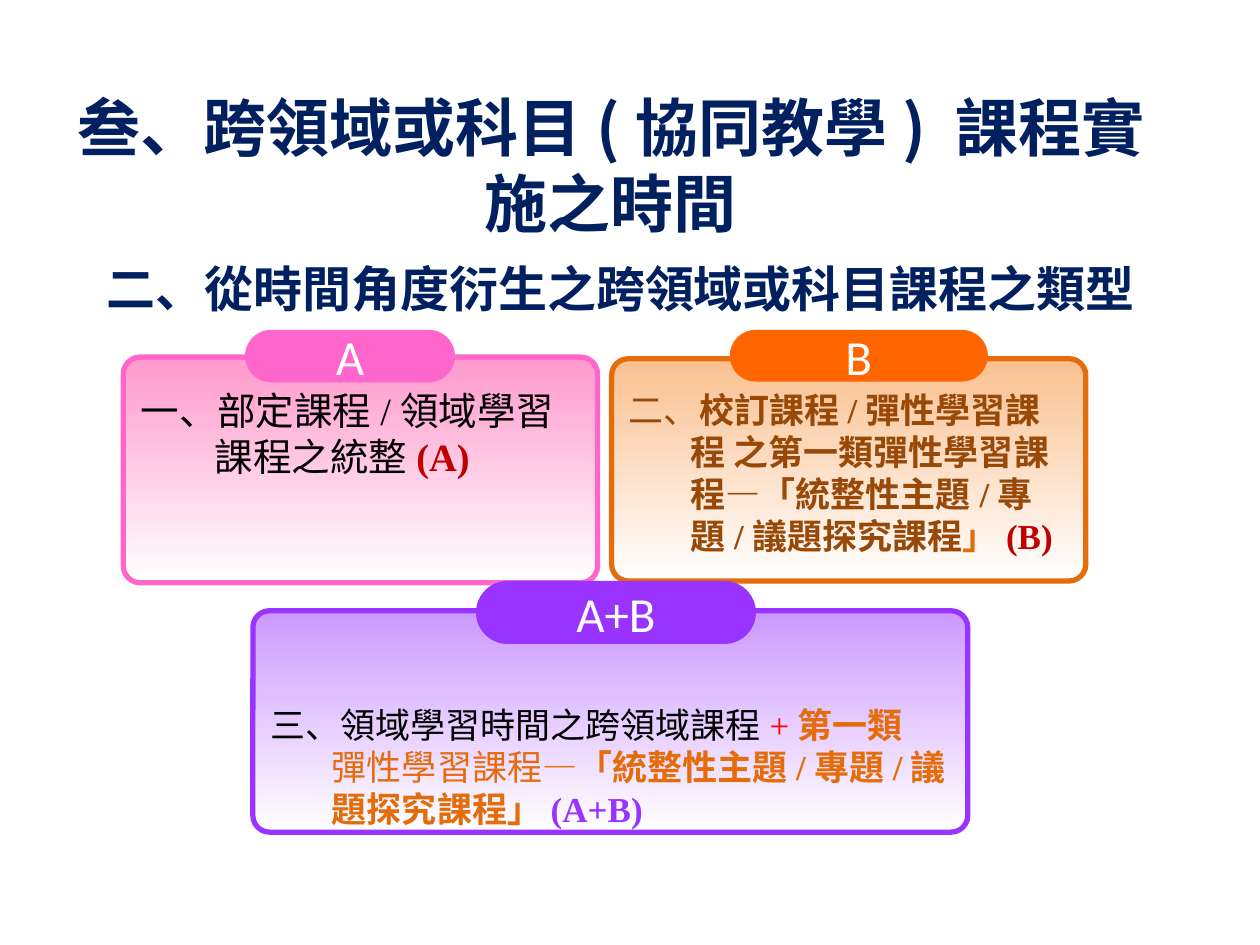
from lxml import etree
from pptx import Presentation
from pptx.dml.color import RGBColor
from pptx.enum import shapes, text
from pptx.oxml import ns
from pptx.util import Pt

NAVY = RGBColor(0x00, 0x20, 0x60)
BLACK = RGBColor(0x00, 0x00, 0x00)
WHITE = RGBColor(0xFF, 0xFF, 0xFF)
RED = RGBColor(0xC0, 0x00, 0x00)
BRIGHT = RGBColor(0xFF, 0x00, 0x00)
PINK = RGBColor(0xFF, 0x66, 0xCC)
ROSE = RGBColor(0xFF, 0x99, 0xCC)
ORANGE = RGBColor(0xE4, 0x6C, 0x0A)
VIVID = RGBColor(0xFF, 0x66, 0x00)
PEACH = RGBColor(0xFA, 0xC0, 0x90)
BROWN = RGBColor(0x98, 0x48, 0x07)
VIOLET = RGBColor(0x99, 0x33, 0xFF)
LILAC = RGBColor(0xCC, 0x99, 0xFF)

HAN = "Noto Sans CJK SC"
SERIF = "Times New Roman"
SHADE = (
    '<a:effectLst xmlns:a="http://schemas.openxmlformats.org/drawingml/2006/main">'
    '<a:outerShdw blurRad="38100" dist="38100" dir="2700000" algn="tl">'
    '<a:srgbClr val="000000"><a:alpha val="43000"/></a:srgbClr>'
    "</a:outerShdw></a:effectLst>"
)


def add_run(para, words, size, face, color, bold=False):
    """Add one styled run, with the Han face for East Asian letters."""
    run = para.add_run()
    run.text = words
    font = run.font
    font.size, font.name, font.bold = Pt(size), face, bold
    font.color.rgb = color
    east = etree.SubElement(run._r.get_or_add_rPr(), ns.qn("a:ea"))
    east.set("typeface", HAN)
    return run


def add_head(slide, box, words, size, align, anchor, shade=False):
    """Add a bold navy heading."""
    frame = slide.shapes.add_textbox(*map(Pt, box)).text_frame
    frame.word_wrap = True
    frame.vertical_anchor = anchor
    para = frame.paragraphs[0]
    para.alignment = align
    para.line_spacing = Pt(size * 1.2)
    run = add_run(para, words, size, HAN, NAVY, True)
    if shade:
        fill = run._r.get_or_add_rPr().find(ns.qn("a:solidFill"))
        fill.addnext(etree.fromstring(SHADE))


def add_round(slide, box, bend):
    """Add a rounded box without shadow."""
    shape = slide.shapes.add_shape(
        shapes.MSO_SHAPE.ROUNDED_RECTANGLE, *map(Pt, box))
    shape.adjustments[0] = bend
    shape.shadow.inherit = False
    return shape


def add_card(slide, box, tint, edge, size, hang, top, runs):
    """Add a card that fades to white and holds a hanging paragraph."""
    card = add_round(slide, box, 0.075)
    card.fill.gradient()
    card.fill.gradient_angle = 270
    for stop, place, color in zip(card.fill.gradient_stops, (0, 1), (tint, WHITE)):
        stop.position = place
        stop.color.rgb = color
    card.line.color.rgb = edge
    card.line.width = Pt(3)
    frame = card.text_frame
    frame.word_wrap = True
    frame.vertical_anchor = text.MSO_ANCHOR.TOP
    frame.margin_top = Pt(top)
    para = frame.paragraphs[0]
    para.alignment = text.PP_ALIGN.LEFT
    para.line_spacing = Pt(size * 1.2)
    props = para._p.get_or_add_pPr()
    props.set("marL", str(Pt(hang)))
    props.set("indent", str(-Pt(hang)))
    for words, color, bold in runs:
        if words == "\v":
            para.add_line_break()
        else:
            add_run(para, words, size, SERIF, color, bold)


def add_tab(slide, box, color, words):
    """Add the pill label on top of a card."""
    tab = add_round(slide, box, 0.5)
    tab.fill.solid()
    tab.fill.fore_color.rgb = color
    tab.line.fill.background()
    frame = tab.text_frame
    frame.word_wrap = False
    frame.vertical_anchor = text.MSO_ANCHOR.MIDDLE
    para = frame.paragraphs[0]
    para.alignment = text.PP_ALIGN.CENTER
    add_run(para, words, 28, "Calibri", WHITE)


def main():
    """Build the slide."""
    deck = Presentation()
    deck.slide_width, deck.slide_height = Pt(720), Pt(540)
    slide = deck.slides.add_slide(deck.slide_layouts[6])
    add_head(slide, (25, 49, 648, 90), "叁、跨領域或科目(協同教學) 課程實施之時間",
             36, text.PP_ALIGN.CENTER, text.MSO_ANCHOR.MIDDLE, True)

    add_card(slide, (70.5, 204, 271, 129), ROSE, PINK, 22, 42.5, 14.4, [
        ("一、部定課程/領域學習課程之統整", BLACK, False),
        ("(A)", RED, True)])
    add_tab(slide, (140, 188.5, 120, 30), PINK, "A")

    add_card(slide, (349.5, 205, 271, 127), PEACH, ORANGE, 20, 35.3, 14.4, [
        ("二、", BROWN, False),
        ("校訂課程/彈性學習課程 之第一類彈性學習課程—「統整性主題/專題/議題探究課程",
         BROWN, True),
        ("」", ORANGE, True),
        ("(B)", RED, True)])
    add_tab(slide, (417, 188.5, 147.5, 29.5), VIVID, "B")

    add_card(slide, (144.5, 349, 408.5, 126.5), LILAC, VIOLET, 20, 35.3, 50, [
        ("三、領域學習時間之跨領域課程", BLACK, False),
        ("+", BRIGHT, False),
        ("第一類", ORANGE, True),
        ("\v", ORANGE, True),
        ("彈性學習課程—", ORANGE, False),
        ("「統整性主題/專題/議題探究課程」", ORANGE, True),
        ("(A+B)", VIOLET, True)])
    add_tab(slide, (272, 332, 160, 36), VIOLET, "A+B")

    add_head(slide, (54, 144, 670, 41), "二、從時間角度衍生之跨領域或科目課程之類型",
             28, text.PP_ALIGN.LEFT, text.MSO_ANCHOR.TOP)
    deck.save("out.pptx")


if __name__ == "__main__":
    main()
